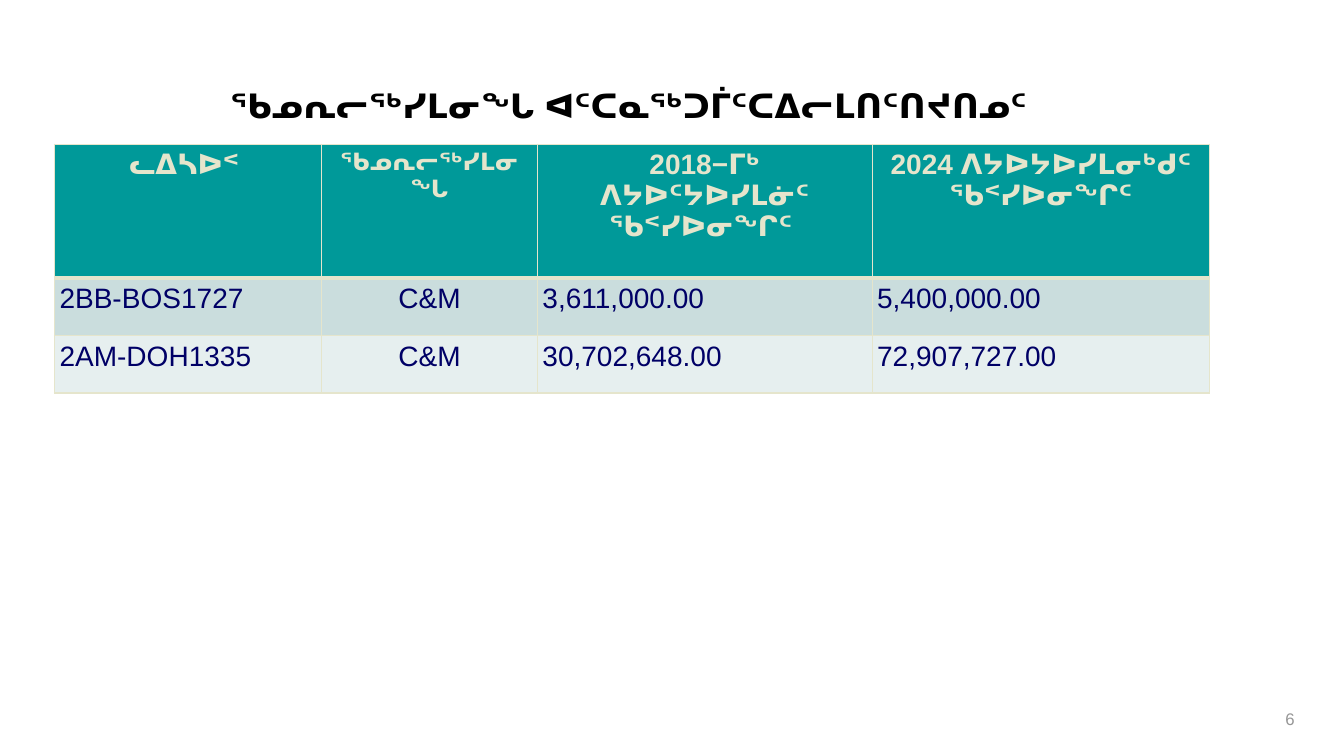
from lxml import etree
from pptx import Presentation
from pptx import util as u
from pptx.dml.color import RGBColor
from pptx.enum import text
from pptx.oxml.ns import qn

WIDTH, HEIGHT = 13.33, 7.5
LEFT, CENTER, RIGHT = text.PP_ALIGN.LEFT, text.PP_ALIGN.CENTER, text.PP_ALIGN.RIGHT
TEAL, CREAM, NAVY = "009999", "E5E5CC", "000066"
BANDS = ["CADDDD", "E6EFEF"]


def color(value):
    return RGBColor.from_string(value)


class Deck:
    """Holds the shared style and the current slide."""

    font = "Arial"
    pad = u.Inches(0.05)

    def __init__(self):
        self.prs = Presentation()
        self.prs.slide_width = u.Inches(WIDTH)
        self.prs.slide_height = u.Inches(HEIGHT)
        self.s = self.prs.slides.add_slide(self.prs.slide_layouts[6])

    def box(self, x, y, w, h):
        """Turn shares of the slide into lengths."""
        sizes = self.prs.slide_width, self.prs.slide_height
        return [round(share * sizes[i % 2]) for i, share in enumerate((x, y, w, h))]

    def add_words(self, tf, words, size, ink, bold=False, **layout):
        p = tf.paragraphs[0]
        for name, value in layout.items():
            setattr(p, name, value)
        r = p.add_run()
        r.text = words
        for name, value in dict(name=self.font, size=u.Pt(size), bold=bold).items():
            setattr(r.font, name, value)
        r.font.color.rgb = color(ink)

    def label(self, at, words, size, ink, wrap=True, pad=0, bold=False, **layout):
        tf = self.s.shapes.add_textbox(*self.box(*at)).text_frame
        tf.word_wrap = wrap
        for side in ("left", "top", "right", "bottom"):
            setattr(tf, f"margin_{side}", pad)
        self.add_words(tf, words, size, ink, bold, **layout)

    def border(self, cell, sides):
        tc_pr = cell._tc.get_or_add_tcPr()
        for position, (side, points) in enumerate(sides.items()):
            ln = etree.Element(qn(f"a:ln{side}"), w=str(u.Pt(points)))
            fill = etree.SubElement(ln, qn("a:solidFill"))
            etree.SubElement(fill, qn("a:srgbClr"), val=CREAM)
            tc_pr.insert(position, ln)

    def table(self, at, widths, heights, header, rows, aligns):
        frame = self.s.shapes.add_table(len(heights), len(widths), *self.box(*at))
        table = frame.table
        for column, width in zip(table.columns, widths):
            column.width = u.Inches(width)
        for row, height in zip(table.rows, heights):
            row.height = u.Inches(height)

        # Header cells
        for c, (words, size) in enumerate(header):
            self.cell(table.cell(0, c), words, size, CREAM, TEAL, CENTER,
                      dict(L=1, R=1, T=1, B=3), bold=True)

        # Body cells in alternating bands
        for i, row in enumerate(rows):
            for c, words in enumerate(row):
                self.cell(table.cell(i + 1, c), words, 20, NAVY, BANDS[i % 2],
                          aligns[c], dict(L=1, R=1, T=1 if i else 3, B=1))

    def cell(self, cell, words, size, ink, fill, align, sides, bold=False):
        for side in ("left", "top", "right", "bottom"):
            setattr(cell, f"margin_{side}", self.pad)
        cell.fill.solid()
        cell.fill.fore_color.rgb = color(fill)
        self.border(cell, sides)
        self.add_words(cell.text_frame, words, size, ink, bold, alignment=align)


def main():
    deck = Deck()

    # Title
    deck.label((0.56 / WIDTH, 0.92 / HEIGHT, 11.44 / WIDTH, 0.33 / HEIGHT),
               "ᖃᓄᕆᓕᖅᓯᒪᓂᖓ ᐊᑦᑕᓇᖅᑐᒦᑦᑕᐃᓕᒪᑎᑦᑎᔪᑎᓄᑦ ", 24, "000000", bold=True,
               alignment=CENTER, line_spacing=u.Pt(23))

    # Licence table
    deck.table((0.54 / WIDTH, 1.43 / HEIGHT, 11.46 / WIDTH, 2.47 / HEIGHT),
               widths=[2.65, 2.14, 3.32, 3.35],
               heights=[1.33, 0.57, 0.57],
               header=[("ᓚᐃᓴᐅᑉ ", 20),
                       ("ᖃᓄᕆᓕᖅᓯᒪᓂᖓ", 17),
                       ("2018−ᒥᒃ ᐱᔭᐅᑦᔭᐅᓯᒪᓃᑦ ᖃᑉᓯᐅᓂᖏᑦ ", 20),
                       ("2024 ᐱᔭᐅᔭᐅᓯᒪᓂᒃᑯᑦ ᖃᑉᓯᐅᓂᖏᑦ", 20)],
               rows=[("2BB-BOS1727", "C&M", "3,611,000.00", "5,400,000.00"),
                     ("2AM-DOH1335", "C&M", "30,702,648.00", "72,907,727.00")],
               aligns=[LEFT, CENTER, LEFT, LEFT])

    # Page number
    deck.label((12.68 / WIDTH, 7 / HEIGHT, 0.21 / WIDTH, 0.29 / HEIGHT),
               "6", 12, "969696", wrap=False, pad=deck.pad,
               alignment=RIGHT, line_spacing=0.9)

    deck.prs.save("out.pptx")


if __name__ == "__main__":
    main()
